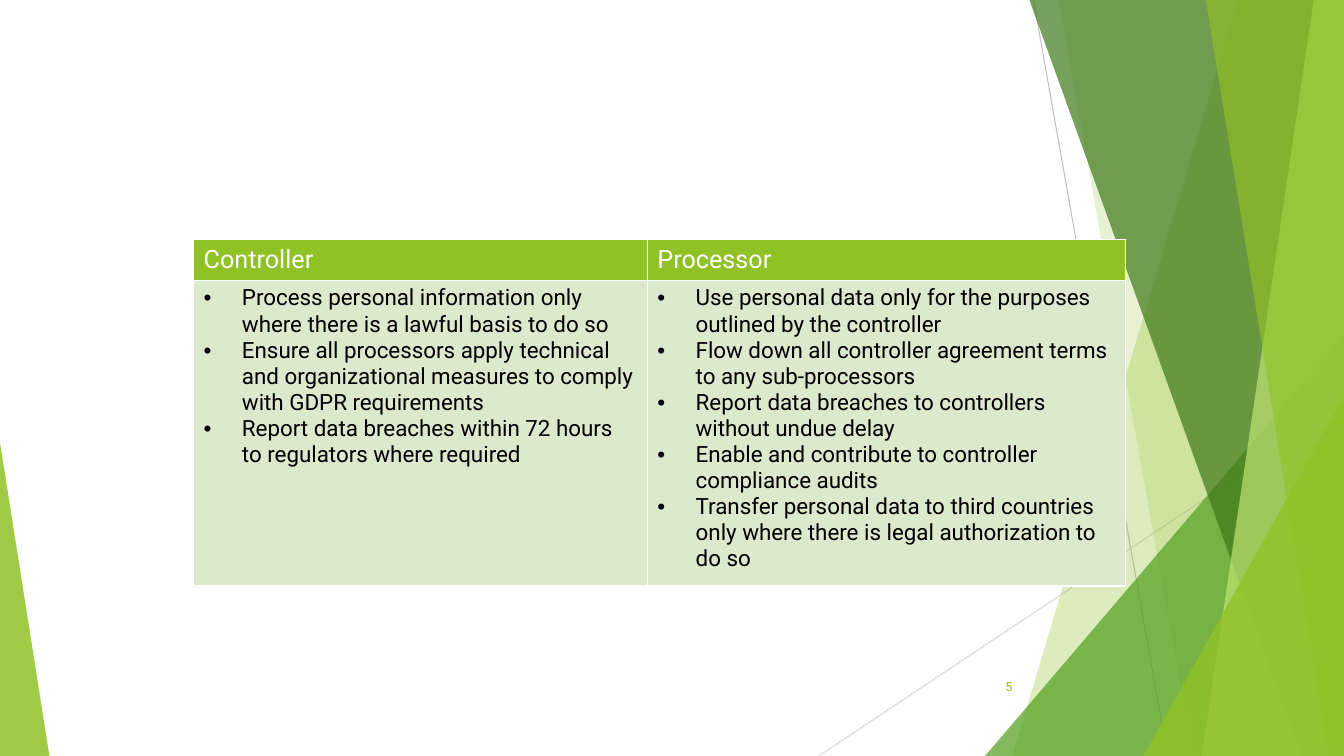
from lxml import etree
from pptx import Presentation
from pptx.dml.color import RGBColor
from pptx.enum.shapes import MSO_CONNECTOR, MSO_SHAPE
from pptx.enum.text import MSO_ANCHOR, PP_ALIGN
from pptx.oxml import parse_xml
from pptx.oxml.ns import nsdecls, qn
from pptx.util import Inches, Pt

WIDTH, HEIGHT = 13.33, 7.5
GREEN = "90C226"


def color(hex_value):
    return RGBColor.from_string(hex_value)


def format_font(font, size, hex_value):
    values = {"name": "Roboto", "size": Pt(size), "bold": False}
    for attribute, value in values.items():
        setattr(font, attribute, value)
    font.color.rgb = color(hex_value)


presentation = Presentation()
presentation.slide_width = Inches(WIDTH)
presentation.slide_height = Inches(HEIGHT)
slide = presentation.slides.add_slide(presentation.slide_layouts[6])

# Thin background lines: start, end, colour
background_lines = [
    ((10.25, 0), (11.58, HEIGHT), "BFBFBF"),
    ((WIDTH, 4.03), (8.12, HEIGHT), "D9D9D9"),
]
for start, end, line_color in background_lines:
    points = [Inches(value) for value in start + end]
    connector = slide.shapes.add_connector(MSO_CONNECTOR.STRAIGHT, *points)
    connector.line.color.rgb = color(line_color)
    connector.line.width = Pt(0.75)
    etree.SubElement(connector._element.spPr, qn("a:effectLst"))

# Facets from back to front. A band runs down the right edge and is given by
# its top and bottom x; a triangle by its left, top, width and apex position.
facets = [
    ("band", (12.28, 10.04), GREEN, 30),
    ("band", (10.5, 11.83), GREEN, 20),
    ("triangle", (9.77, 3.33, 3.56, 1), "54A021", 72),
    ("band", (10.21, 12.91), "3F7819", 70),
    ("band", (13.03, 11.92), "C0E474", 70),
    ("band", (11.96, 13.18), GREEN, 65),
    ("triangle", (11.34, 3.93, 1.99, 1), GREEN, 80),
    ("triangle", (0, 4.39, 0.49, 0), GREEN, 85),
]
for kind, geometry, fill_color, opacity in facets:
    if kind == "band":
        top_x, bottom_x = geometry
        corners = [(WIDTH, 0), (WIDTH, HEIGHT), (bottom_x, HEIGHT)]
        builder = slide.shapes.build_freeform(Inches(top_x), 0)
        builder.add_line_segments([(Inches(x), Inches(y)) for x, y in corners])
        shape = builder.convert_to_shape()
    else:
        left, top, width, apex = geometry
        shape = slide.shapes.add_shape(
            MSO_SHAPE.ISOSCELES_TRIANGLE,
            Inches(left), Inches(top), Inches(width), Inches(HEIGHT - top),
        )
        shape.adjustments[0] = apex
    shape.shadow.inherit = False
    shape.line.fill.background()
    shape.fill.solid()
    shape.fill.fore_color.rgb = color(fill_color)
    fill_element = shape._element.spPr.find(qn("a:solidFill"))
    etree.SubElement(fill_element[0], qn("a:alpha"), val=str(opacity * 1000))

# Slide number
number_box = slide.shapes.add_textbox(
    Inches(9.39), Inches(6.61), Inches(0.75), Inches(0.4)
)
number_frame = number_box.text_frame
number_frame.word_wrap = True
number_frame.vertical_anchor = MSO_ANCHOR.MIDDLE
number_frame.text = "5"
number_frame.paragraphs[0].alignment = PP_ALIGN.RIGHT
format_font(number_frame.paragraphs[0].runs[0].font, 9, GREEN)

# Duties of each role
duties = {
    "Controller": [
        "Process personal information only where there is a lawful basis to do so",
        "Ensure all processors apply technical and organizational measures to comply with GDPR requirements",
        "Report data breaches within 72 hours to regulators where required",
    ],
    "Processor": [
        "Use personal data only for the purposes outlined by the controller",
        "Flow down all controller agreement terms to any sub-processors",
        "Report data breaches to controllers without undue delay",
        "Enable and contribute to controller compliance audits",
        "Transfer personal data to third countries only where there is legal authorization to do so",
    ],
}
column_widths = [4.5, 4.74]
row_heights = [0.39, 2.95]
table = slide.shapes.add_table(
    2, 2, Inches(1.92), Inches(2.38),
    Inches(sum(column_widths)), Inches(sum(row_heights)),
).table
for column, width in zip(table.columns, column_widths):
    column.width = Inches(width)
for row, height in zip(table.rows, row_heights):
    row.height = Inches(height)

row_styles = [
    {"fill": GREEN, "size": 18, "text": "FFFFFF"},
    {"fill": "DBE9CD", "size": 16, "text": "000000"},
]
for column_index, (role, role_duties) in enumerate(duties.items()):
    for row_index, lines in enumerate([[role], role_duties]):
        style = row_styles[row_index]
        cell = table.cell(row_index, column_index)
        cell.text = "\n".join(lines)
        cell_properties = cell._tc.get_or_add_tcPr()
        for side in "LRTB":
            cell_properties.append(parse_xml(
                f'<a:ln{side} {nsdecls("a")} w="{Pt(1)}"><a:solidFill>'
                f'<a:srgbClr val="FFFFFF"/></a:solidFill></a:ln{side}>'
            ))
        cell.fill.solid()
        cell.fill.fore_color.rgb = color(style["fill"])
        for paragraph in cell.text_frame.paragraphs:
            format_font(paragraph.runs[0].font, style["size"], style["text"])
            if row_index == 1:
                properties = paragraph._p.get_or_add_pPr()
                properties.set("marL", str(Inches(0.38)))
                properties.set("indent", str(Inches(-0.38)))
                etree.SubElement(properties, qn("a:buFont"), typeface="Arial")
                etree.SubElement(properties, qn("a:buChar"), char="•")

presentation.save("out.pptx")
